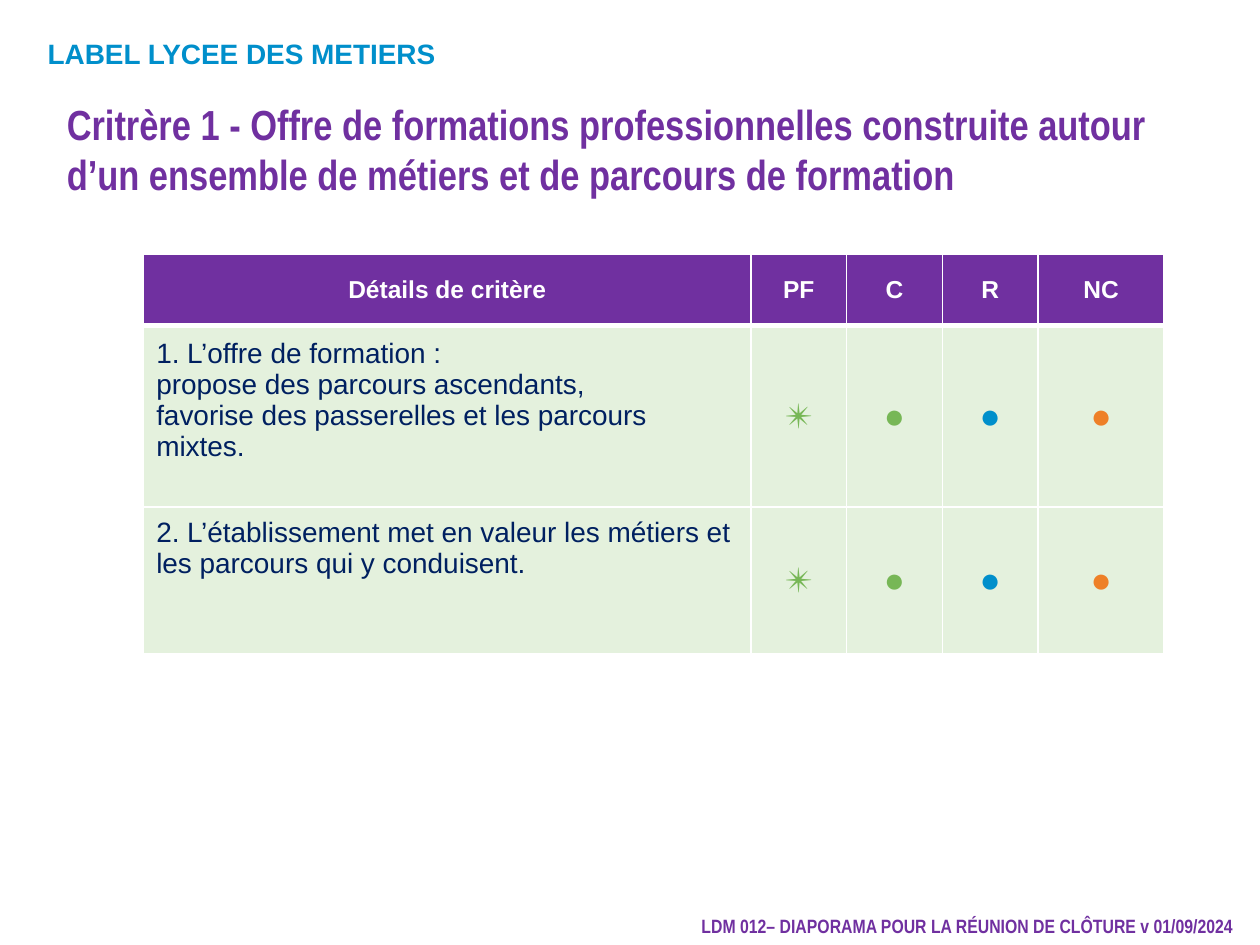
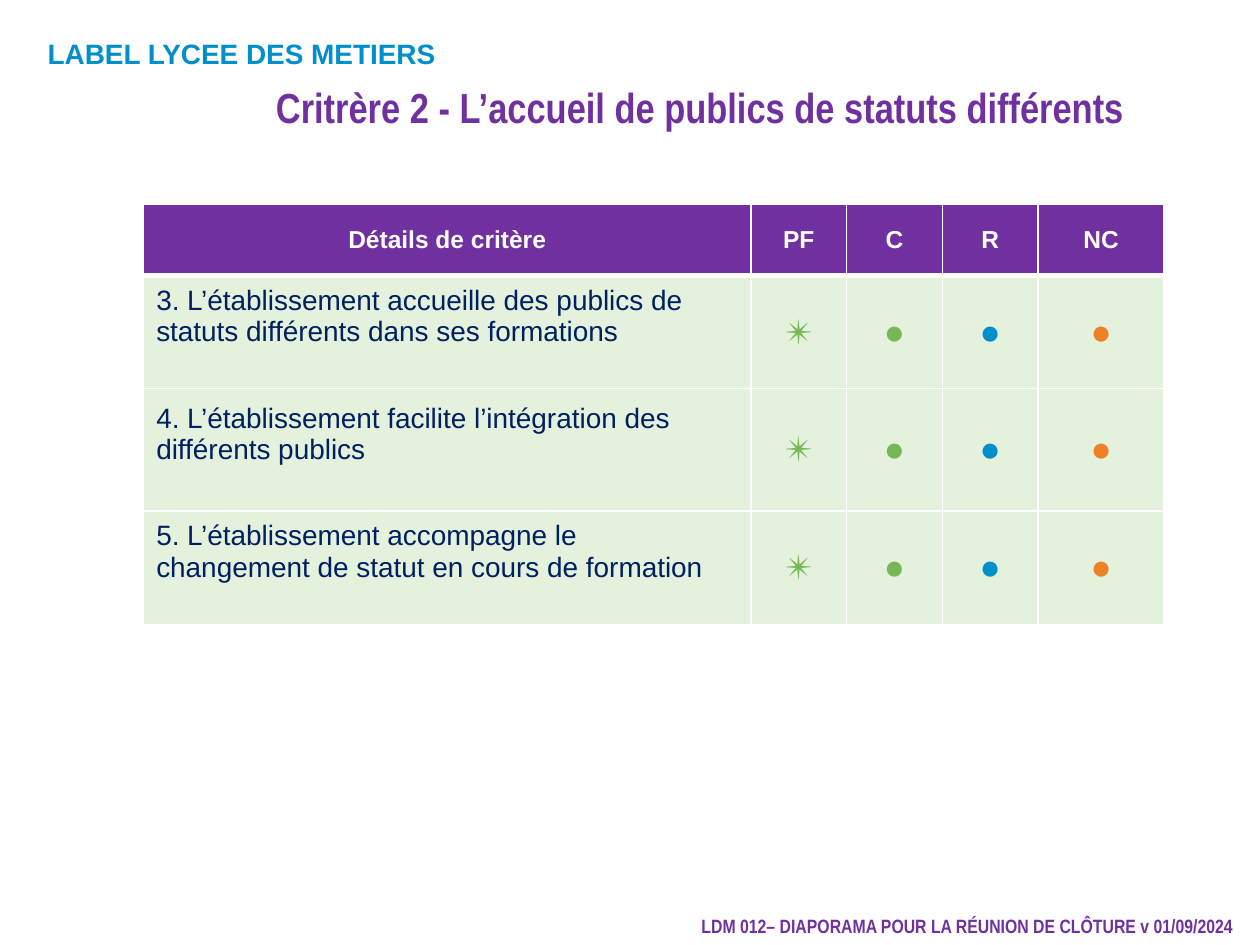
"""Build two criterion slides of the LABEL LYCEE DES METIERS closing meeting."""
from dataclasses import dataclass

import pptx
import pptx.dml.color
import pptx.enum.text
import pptx.oxml
import pptx.oxml.ns
import pptx.presentation
import pptx.slide
import pptx.table
import pptx.text.text
import pptx.util

RGBColor = pptx.dml.color.RGBColor
Align = pptx.enum.text.PP_ALIGN
Anchor = pptx.enum.text.MSO_ANCHOR

PURPLE = RGBColor(0x70, 0x30, 0xA0)
BLUE = RGBColor(0x00, 0x8F, 0xCB)
GREEN = RGBColor(0x77, 0xB7, 0x56)
ORANGE = RGBColor(0xEE, 0x80, 0x27)
NAVY = RGBColor(0x00, 0x20, 0x60)
PALE_GREEN = RGBColor(0xE4, 0xF1, 0xDD)
WHITE = RGBColor(0xFF, 0xFF, 0xFF)

GRID_COLUMNS, GRID_ROWS = 100, 75
UNIT = pptx.util.Inches(0.1)
TITLE_ONLY = 5

COLUMN_WIDTHS = (48.2, 7.6, 7.6, 7.6, 10)
HEADINGS = ("Détails de critère", "PF", "C", "R", "NC")
RATINGS = (("✴", GREEN), ("●", GREEN), ("●", BLUE), ("●", ORANGE))
HEADER_HEIGHT = 5.65
TABLE_LEFT = 11.4
LINE_HEIGHT = 2.5
THIN, THICK = 1, 3


@dataclass(frozen=True)
class Area:
    """Rectangle in grid columns and rows."""
    left: float
    top: float
    width: float
    height: float

    def emu(self) -> tuple[int, int, int, int]:
        """Return the rectangle in slide units."""
        return (grid(self.left), grid(self.top), grid(self.width), grid(self.height))


@dataclass(frozen=True)
class TextStyle:
    """Look of a piece of text."""
    font: str
    size: float
    color: RGBColor
    bold: bool = False
    align: Align = Align.LEFT


@dataclass(frozen=True)
class Banner:
    """Text shown at the same place on every slide."""
    text: str
    area: Area
    style: TextStyle


@dataclass(frozen=True)
class Detail:
    """Table row for one detail, raised by a number of lines."""
    text: str
    height: float
    raised_lines: int = 1


@dataclass(frozen=True)
class Criterion:
    """Content of one slide."""
    title: str
    title_area: Area
    table_top: float
    details: tuple[Detail, ...]


TITLE_STYLE = TextStyle("Arial Narrow", 24, PURPLE, bold=True)
HEADING_STYLE = TextStyle("Arial", 14, WHITE, bold=True, align=Align.CENTER)
DETAIL_STYLE = TextStyle("Arial", 16, NAVY)

BANNERS = (
    Banner("LDM 012– DIAPORAMA POUR LA RÉUNION DE CLÔTURE v 01/09/2024",
           Area(31.9, 72.1, 67, 2.9),
           TextStyle("Arial Narrow", 11, PURPLE, bold=True, align=Align.RIGHT)),
    Banner("LABEL LYCEE DES METIERS", Area(2.8, 2.4, 39.4, 3.7),
           TextStyle("Arial", 16, BLUE, bold=True)),
)

CRITERIA = (
    Criterion(
        "Critrère 1 - Offre de formations professionnelles construite autour "
        "d’un ensemble de métiers et de parcours de formation",
        Area(4.3, 7.3, 91.3, 8.2), 20.2,
        (Detail("1. L’offre de formation :\n"
                "propose des parcours ascendants,\n"
                "favorise des passerelles et les parcours mixtes.", 14.4),
         Detail("2. L’établissement met en valeur les métiers et les parcours "
                "qui y conduisent.", 11.6, raised_lines=2))),
    Criterion(
        "Critrère 2 - L’accueil de publics de statuts différents",
        Area(20.9, 6, 81.9, 8.2), 16.2,
        (Detail("3. L’établissement accueille des publics de statuts différents "
                "dans ses formations", 9),
         Detail("4. L’établissement facilite l’intégration des différents publics", 9.7),
         Detail("5. L’établissement accompagne le changement de statut en cours "
                "de formation", 9))),
)


def grid(steps: float) -> pptx.util.Emu:
    """Convert grid steps to slide units."""
    return pptx.util.Emu(round(steps * UNIT))


def write(frame: pptx.text.text.TextFrame, text: str, style: TextStyle) -> None:
    """Fill a text frame and format all its runs."""
    frame.text = text
    for paragraph in frame.paragraphs:
        paragraph.alignment = style.align
        for run in paragraph.runs:
            run.font.name = style.font
            run.font.size = pptx.util.Pt(style.size)
            run.font.bold = style.bold
            run.font.color.rgb = style.color


def add_borders(cell: pptx.table._Cell, top: float, bottom: float) -> None:
    """Draw white borders around a cell."""
    properties = cell._tc.get_or_add_tcPr()
    for side, width in (("L", THIN), ("R", THIN), ("T", top), ("B", bottom)):
        properties.append(pptx.oxml.parse_xml(
            f'<a:ln{side} {pptx.oxml.ns.nsdecls("a")} w="{pptx.util.Pt(width)}">'
            f'<a:solidFill><a:srgbClr val="{WHITE}"/></a:solidFill></a:ln{side}>'))


def fill_cell(cell: pptx.table._Cell, text: str, style: TextStyle, fill: RGBColor,
              top: float = THIN, bottom: float = THIN) -> None:
    """Write, border and colour one table cell."""
    write(cell.text_frame, text, style)
    cell.vertical_anchor = Anchor.MIDDLE
    add_borders(cell, top, bottom)
    cell.fill.solid()
    cell.fill.fore_color.rgb = fill


def add_banner(slide: pptx.slide.Slide, banner: Banner) -> None:
    """Add a shared banner to the slide."""
    frame = slide.shapes.add_textbox(*banner.area.emu()).text_frame
    frame.word_wrap = True
    write(frame, banner.text, banner.style)


def add_title(slide: pptx.slide.Slide, criterion: Criterion) -> None:
    """Place and format the slide title."""
    title = slide.shapes.title
    title.left, title.top, title.width, title.height = criterion.title_area.emu()
    title.text_frame.auto_size = pptx.enum.text.MSO_AUTO_SIZE.NONE
    title.text_frame.vertical_anchor = Anchor.TOP
    write(title.text_frame, criterion.title, TITLE_STYLE)


def add_details(slide: pptx.slide.Slide, criterion: Criterion) -> None:
    """Add the table of details with its rating marks."""
    heights = [HEADER_HEIGHT, *(detail.height for detail in criterion.details)]
    area = Area(TABLE_LEFT, criterion.table_top, sum(COLUMN_WIDTHS), sum(heights))
    table = slide.shapes.add_table(len(heights), len(COLUMN_WIDTHS), *area.emu()).table
    for column, width in zip(table.columns, COLUMN_WIDTHS):
        column.width = grid(width)
    for row, height in zip(table.rows, heights):
        row.height = grid(height)
    for index, heading in enumerate(HEADINGS):
        fill_cell(table.cell(0, index), heading, HEADING_STYLE, PURPLE, bottom=THICK)
    for index, detail in enumerate(criterion.details, start=1):
        top = THICK if index == 1 else THIN
        description = table.cell(index, 0)
        fill_cell(description, detail.text, DETAIL_STYLE, PALE_GREEN, top=top)
        description.margin_bottom = grid(0.5 + detail.raised_lines * LINE_HEIGHT)
        for position, (mark, color) in enumerate(RATINGS, start=1):
            style = TextStyle("Arial", 20, color, align=Align.CENTER)
            fill_cell(table.cell(index, position), mark, style, PALE_GREEN, top=top)


def add_criterion(deck: pptx.presentation.Presentation, criterion: Criterion) -> None:
    """Add the slide of one criterion."""
    slide = deck.slides.add_slide(deck.slide_layouts[TITLE_ONLY])
    for banner in BANNERS:
        add_banner(slide, banner)
    add_details(slide, criterion)
    add_title(slide, criterion)


def main() -> None:
    """Build and save the deck."""
    deck = pptx.Presentation()
    deck.slide_width = grid(GRID_COLUMNS)
    deck.slide_height = grid(GRID_ROWS)
    for criterion in CRITERIA:
        add_criterion(deck, criterion)
    deck.save("out.pptx")


if __name__ == "__main__":
    main()
